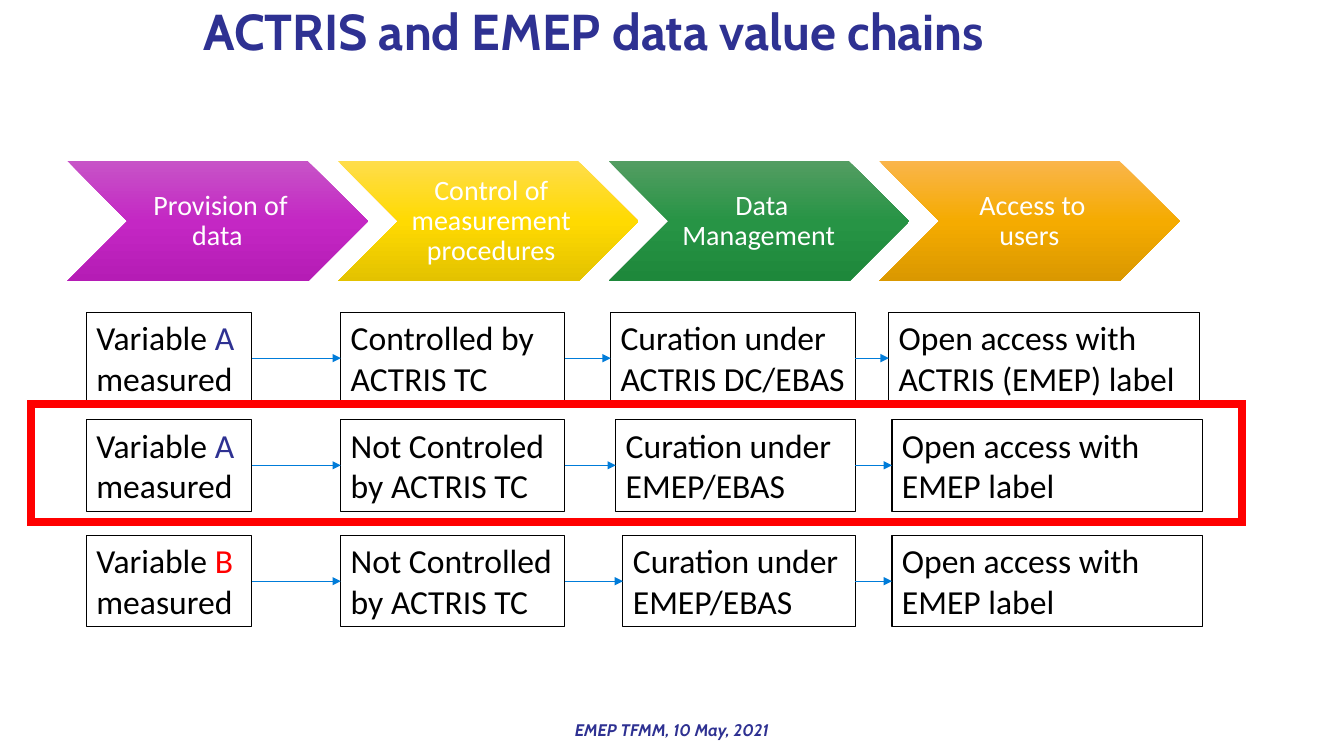
from collections import namedtuple
from copy import deepcopy
from dataclasses import dataclass
from itertools import pairwise

from lxml import etree
from pptx import Presentation
from pptx.dml.color import RGBColor
from pptx.enum.shapes import MSO_CONNECTOR, MSO_SHAPE
from pptx.enum.text import MSO_ANCHOR, MSO_AUTO_SIZE, PP_ALIGN
from pptx.oxml.ns import qn
from pptx.util import Cm, Pt

CHEVRON, RECTANGLE = MSO_SHAPE.CHEVRON, MSO_SHAPE.RECTANGLE
STRAIGHT = MSO_CONNECTOR.STRAIGHT
TOP, MIDDLE = MSO_ANCHOR.TOP, MSO_ANCHOR.MIDDLE
GROW, FIXED = MSO_AUTO_SIZE.SHAPE_TO_FIT_TEXT, MSO_AUTO_SIZE.NONE
CENTER = PP_ALIGN.CENTER
LEFT_SIDE, RIGHT_SIDE = 1, 3
TITLE_ONLY = 5

Box = namedtuple("Box", "left top width height")  # centimetres


@dataclass(frozen=True)
class Theme:
    heading_font: str = "Cabin"
    body_font: str = "Calibri"
    navy: str = "2E3192"
    red: str = "FF0000"
    black: str = "000000"
    white: str = "FFFFFF"
    arrow: str = "007CD9"
    title_size: int = 36
    cell_size: int = 24
    stage_size: int = 20
    footer_size: int = 12


THEME = Theme()

# Stage name and its gradient, top to bottom
STAGES = [
    ("Provision of data ", ("C754C7", "C427C4", "B51CB5")),
    ("Control of measurement procedures", ("FFDD4B", "FFDA01", "E3C200")),
    ("Data Management ", ("539D62", "279445", "1E883B")),
    ("Access to users ", ("FAB54B", "F5AB00", "DA9800")),
]

# Variable, its colour, the three later steps, left of curation, left of access
CHAINS = [
    ("A", THEME.navy, "Controlled by ACTRIS TC", "Curation under ACTRIS DC/EBAS",
     "Open access with ACTRIS (EMEP) label", 13.21, 20.22),
    ("A", THEME.navy, "Not Controled by ACTRIS TC", "Curation under EMEP/EBAS",
     "Open access with EMEP label", 13.34, 20.3),
    ("B", THEME.red, "Not Controlled by ACTRIS TC", "Curation under EMEP/EBAS",
     "Open access with EMEP label", 13.52, 20.3),
]
CHAIN_TOPS = (0, 2.7, 5.62)


def lengths(box):
    return [Cm(value) for value in box]


def apply(target, settings):
    for name, value in settings.items():
        setattr(target, name, value)


def add_run(paragraph, text, font, size, color, **style):
    run = paragraph.add_run()
    run.text = text
    apply(run.font, {"name": font, "size": Pt(size), **style})
    run.font.color.rgb = RGBColor.from_string(color)


def set_line(line, color, width):
    line.color.rgb = RGBColor.from_string(color)
    line.width = Pt(width)


def add_title(slide, box):
    title = slide.shapes.title
    apply(title, dict(zip(Box._fields, lengths(box))))
    apply(title.text_frame, {"auto_size": FIXED, "vertical_anchor": MIDDLE, "word_wrap": True})
    heading = title.text_frame.paragraphs[0]
    apply(heading, {"alignment": CENTER, "line_spacing": 0.9})
    add_run(heading, "ACTRIS and EMEP data value chains ",
            THEME.heading_font, THEME.title_size, THEME.navy, bold=True)


def add_footer(slide, box):
    footer = slide.shapes.add_textbox(*lengths(box))
    footer.text_frame.word_wrap = True
    event = footer.text_frame.paragraphs[0]
    apply(event, {"alignment": CENTER, "line_spacing": 1.25})
    add_run(event, "EMEP TFMM, 10 May, 2021", THEME.heading_font,
            THEME.footer_size, THEME.navy, bold=True, italic=True)


def fill_gradient(shape, colors):
    shape.fill.gradient()
    shape.fill.gradient_angle = 270
    stops = shape._element.spPr.find(".//" + qn("a:gsLst"))
    stops.append(deepcopy(stops[-1]))
    for stop, color, position in zip(shape.fill.gradient_stops, colors, (0, 0.5, 1)):
        stop.color.rgb = RGBColor.from_string(color)
        stop.position = position


def add_stages(slide, box):
    width = 7.57
    pitch = (box.width - width) / (len(STAGES) - 1)
    for index, (name, colors) in enumerate(STAGES):
        place = Box(box.left + index * pitch, box.top, width, box.height)
        stage = slide.shapes.add_shape(CHEVRON, *lengths(place))
        stage.shadow.inherit = False
        fill_gradient(stage, colors)
        stage.line.fill.background()
        apply(stage.text_frame, {
            "vertical_anchor": MIDDLE, "word_wrap": True, "margin_left": Cm(0.23),
            "margin_top": Cm(0.08), "margin_right": Cm(0.08), "margin_bottom": Cm(0.08)})
        label = stage.text_frame.paragraphs[0]
        apply(label, {"alignment": CENTER, "line_spacing": 0.9})
        add_run(label, name, THEME.body_font, THEME.stage_size, THEME.white)


def add_cell(slide, box, lines, wrap=True):
    """Outlined box; each line is a list of (text, colour) runs."""
    cell = slide.shapes.add_textbox(*lengths(box))
    set_line(cell.line, THEME.black, 0.75)
    frame = cell.text_frame
    apply(frame, {"word_wrap": wrap, "auto_size": GROW, "vertical_anchor": TOP})
    for index, runs in enumerate(lines):
        paragraph = frame.add_paragraph() if index else frame.paragraphs[0]
        for text, color in runs:
            add_run(paragraph, text, THEME.body_font, THEME.cell_size, color)
    return cell


def add_arrow(slide, source, target):
    arrow = slide.shapes.add_connector(STRAIGHT, 0, 0, 0, 0)
    arrow.begin_connect(source, RIGHT_SIDE)
    arrow.end_connect(target, LEFT_SIDE)
    set_line(arrow.line, THEME.arrow, 0.5)
    properties = arrow._element.spPr
    etree.SubElement(properties.find(qn("a:ln")), qn("a:tailEnd"), type="triangle")
    etree.SubElement(properties, qn("a:effectLst"))


def add_chain(slide, box, chain):
    variable, color, control, curation, access, curation_left, access_left = chain
    steps = [
        (0, 4.17, [[("Variable ", THEME.black), (variable, color)],
                   [("measured", THEME.black)]], False),
        (6.41, 5.64, [[(control, THEME.black)]], True),
        (curation_left, 19.37 - curation_left, [[(curation, THEME.black)]], True),
        (access_left, 7.82, [[(access, THEME.black)]], True),
    ]
    cells = [add_cell(slide, Box(box.left + left, box.top, width, box.height), lines, wrap)
             for left, width, lines, wrap in steps]
    for source, target in pairwise(cells):
        add_arrow(slide, source, target)


def add_highlight(slide, box):
    highlight = slide.shapes.add_shape(RECTANGLE, *lengths(box))
    highlight.shadow.inherit = False
    highlight.fill.background()
    set_line(highlight.line, THEME.red, 5.75)
    etree.SubElement(highlight._element.spPr.find(qn("a:ln")), qn("a:miter"), lim="800000")


def main():
    deck = Presentation()
    deck.slide_width, deck.slide_height = Cm(33.87), Cm(19.05)
    slide = deck.slides.add_slide(deck.slide_layouts[TITLE_ONLY])

    # Heading and footer
    add_title(slide, Box(0.79, 0, 28.63, 1.73))
    add_footer(slide, Box(0, 17.88, 33.87, 0.84))

    # Stages, then one chain per variable
    add_stages(slide, Box(1.7, 4.06, 28.03, 3.03))
    for top, chain in zip(CHAIN_TOPS, CHAINS):
        add_chain(slide, Box(2.18, 7.87 + top, 28.12, 2.31), chain)

    # Frame around the second chain
    add_highlight(slide, Box(0.79, 10.19, 30.51, 2.97))
    deck.save("out.pptx")


if __name__ == "__main__":
    main()
